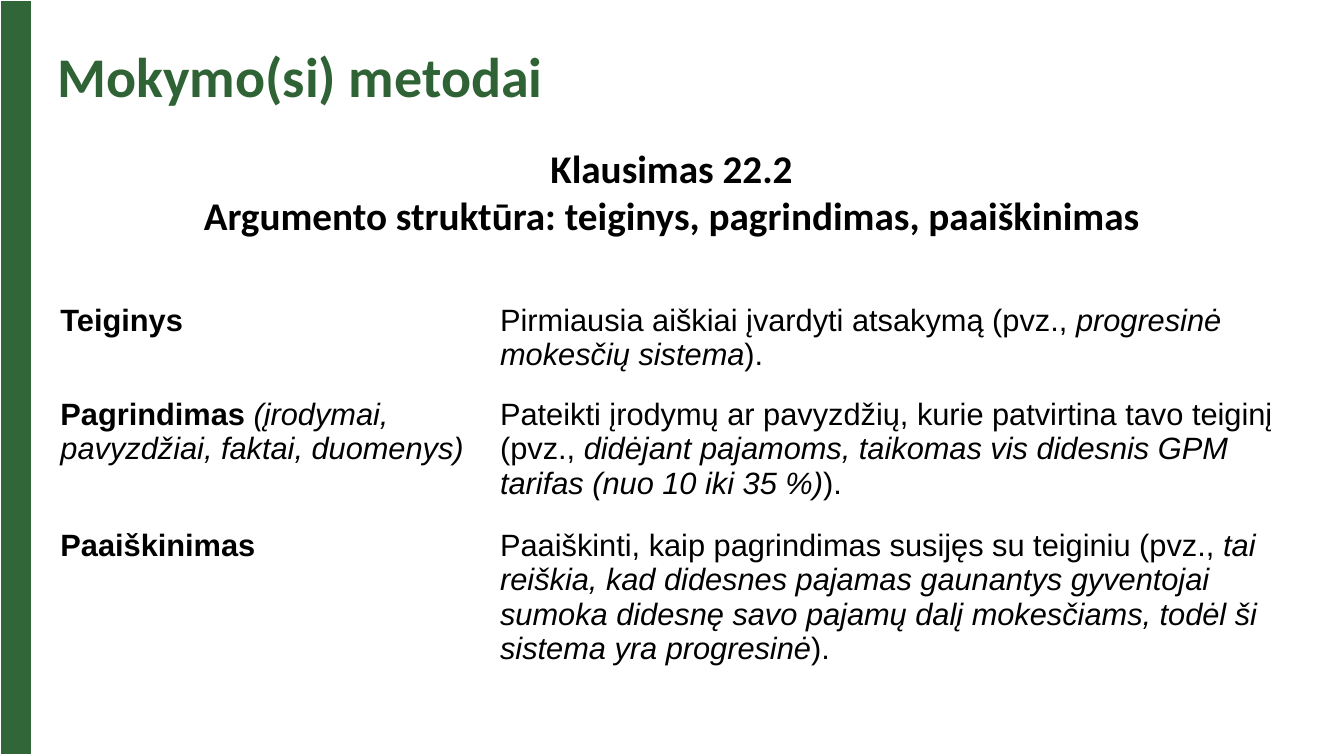
"""Build the slide on the structure of an argument."""
from dataclasses import dataclass

from lxml import etree
from pptx import Presentation, util as u
from pptx.dml.color import RGBColor
from pptx.enum import text
from pptx.oxml.ns import qn

WIDTH, HEIGHT = 13.33, 7.5
INSET = 0.1
LINE_HEIGHT = 0.34


@dataclass(frozen=True)
class Theme:
    """Colours, fonts and type sizes."""
    bar: str = "316738"
    title: str = "2F6335"
    ink: str = "000000"
    edge: str = "FFFFFF"
    heading_font: str = "Calibri"
    body_font: str = "Arial"
    title_size: int = 40
    heading_size: int = 28
    body_size: int = 22


@dataclass(frozen=True)
class Box:
    """A place given as shares of the slide's width and height."""
    left: float
    top: float
    width: float
    height: float

    def lengths(self) -> tuple[int, int, int, int]:
        """Return left, top, width and height as slide lengths."""
        return (u.Inches(self.left * WIDTH), u.Inches(self.top * HEIGHT),
                u.Inches(self.width * WIDTH), u.Inches(self.height * HEIGHT))


@dataclass(frozen=True)
class Span:
    """A piece of text in one style."""
    words: str
    bold: bool = False
    italic: bool = False


@dataclass(frozen=True)
class Step:
    """One part of the argument, with its advice and number of lines."""
    name: tuple[Span, ...]
    advice: tuple[Span, ...]
    lines: int


THEME = Theme()
BAR = Box(0, 0, 0.0233, 1)
TITLE = Box(0.0353, 0.052, 0.3796, 0.108)
HEADING = Box(0.1268, 0.1773, 0.7457, 0.1173)
STEPS_TABLE = Box(0.0375, 0.388, 0.9482, 0.488)
NAME_SHARE = 0.345

HEADING_LINES = ("Klausimas 22.2", "Argumento struktūra: teiginys, pagrindimas, paaiškinimas")
STEPS = (
    Step((Span("Teiginys", bold=True),),
         (Span("Pirmiausia aiškiai įvardyti atsakymą (pvz., "),
          Span("progresinė mokesčių sistema", italic=True), Span(").")), 2),
    Step((Span("Pagrindimas ", bold=True),
          Span("(įrodymai, pavyzdžiai, faktai, duomenys)", italic=True)),
         (Span("Pateikti įrodymų ar pavyzdžių, kurie patvirtina tavo teiginį (pvz., "),
          Span("didėjant pajamoms, taikomas vis didesnis GPM tarifas (nuo 10 iki 35 %)",
               italic=True), Span(").")), 3),
    Step((Span("Paaiškinimas", bold=True),),
         (Span("Paaiškinti, kaip pagrindimas susijęs su teiginiu (pvz., "),
          Span("tai reiškia, kad didesnes pajamas gaunantys gyventojai sumoka didesnę savo "
               "pajamų dalį mokesčiams, todėl ši sistema yra progresinė", italic=True),
          Span(").")), 4),
)


def write(para, spans: tuple[Span, ...], font: str, size: int, color: str) -> None:
    """Add styled spans to a paragraph."""
    for span in spans:
        run = para.add_run()
        run.text = span.words
        run.font.name, run.font.size = font, u.Pt(size)
        run.font.bold, run.font.italic = span.bold, span.italic
        run.font.color.rgb = RGBColor.from_string(color)


def set_insets(holder) -> None:
    """Give a text frame or a cell equal margins, with text from the top."""
    holder.margin_left = holder.margin_right = u.Inches(INSET)
    holder.margin_top = holder.margin_bottom = u.Inches(INSET)
    holder.vertical_anchor = text.MSO_ANCHOR.TOP


def add_plain_table(page, rows: int, columns: int, box: Box):
    """Add a table without header row or bands."""
    table = page.shapes.add_table(rows, columns, *box.lengths()).table
    table.first_row = table.horz_banding = False
    return table


def add_bar(page) -> None:
    """Draw the green bar on the left as a one-cell table with white edges."""
    cell = add_plain_table(page, 1, 1, BAR).cell(0, 0)
    properties = cell._tc.get_or_add_tcPr()
    for side, points in {"L": 1, "R": 1, "T": 1, "B": 3}.items():
        line = etree.SubElement(properties, qn(f"a:ln{side}"), w=str(u.Pt(points)))
        fill = etree.SubElement(line, qn("a:solidFill"))
        etree.SubElement(fill, qn("a:srgbClr"), val=THEME.edge)
    cell.fill.solid()
    cell.fill.fore_color.rgb = RGBColor.from_string(THEME.bar)


def add_title(page) -> None:
    """Place and write the slide title."""
    title = page.shapes.title
    title.left, title.top, title.width, title.height = TITLE.lengths()
    frame = title.text_frame
    frame.auto_size = text.MSO_AUTO_SIZE.SHAPE_TO_FIT_TEXT
    set_insets(frame)
    para = frame.paragraphs[0]
    para.alignment, para.line_spacing = text.PP_ALIGN.LEFT, 0.9
    write(para, (Span("Mokymo(si) metodai", bold=True),),
          THEME.heading_font, THEME.title_size, THEME.title)


def add_heading(page) -> None:
    """Write the centred question heading."""
    frame = page.shapes.add_textbox(*HEADING.lengths()).text_frame
    frame.word_wrap = True
    set_insets(frame)
    for index, words in enumerate(HEADING_LINES):
        para = frame.add_paragraph() if index else frame.paragraphs[0]
        para.alignment = text.PP_ALIGN.CENTER
        write(para, (Span(words, bold=True),),
              THEME.heading_font, THEME.heading_size, THEME.ink)


def add_steps(page) -> None:
    """Draw the table of argument parts and advice."""
    table = add_plain_table(page, len(STEPS), 2, STEPS_TABLE)
    for column, share in zip(table.columns, (NAME_SHARE, 1 - NAME_SHARE)):
        column.width = u.Inches(STEPS_TABLE.width * WIDTH * share)
    for row, step in zip(table.rows, STEPS):
        row.height = u.Inches(2 * INSET + LINE_HEIGHT * step.lines)
        for cell, spans in zip(row.cells, (step.name, step.advice)):
            cell.fill.background()
            set_insets(cell)
            write(cell.text_frame.paragraphs[0], spans,
                  THEME.body_font, THEME.body_size, THEME.ink)


def main() -> None:
    """Build and save the deck."""
    deck = Presentation()
    deck.slide_width, deck.slide_height = u.Inches(WIDTH), u.Inches(HEIGHT)
    page = deck.slides.add_slide(deck.slide_layouts.get_by_name("Title Only"))
    add_bar(page)
    add_steps(page)
    add_title(page)
    add_heading(page)
    deck.save("out.pptx")


if __name__ == "__main__":
    main()
